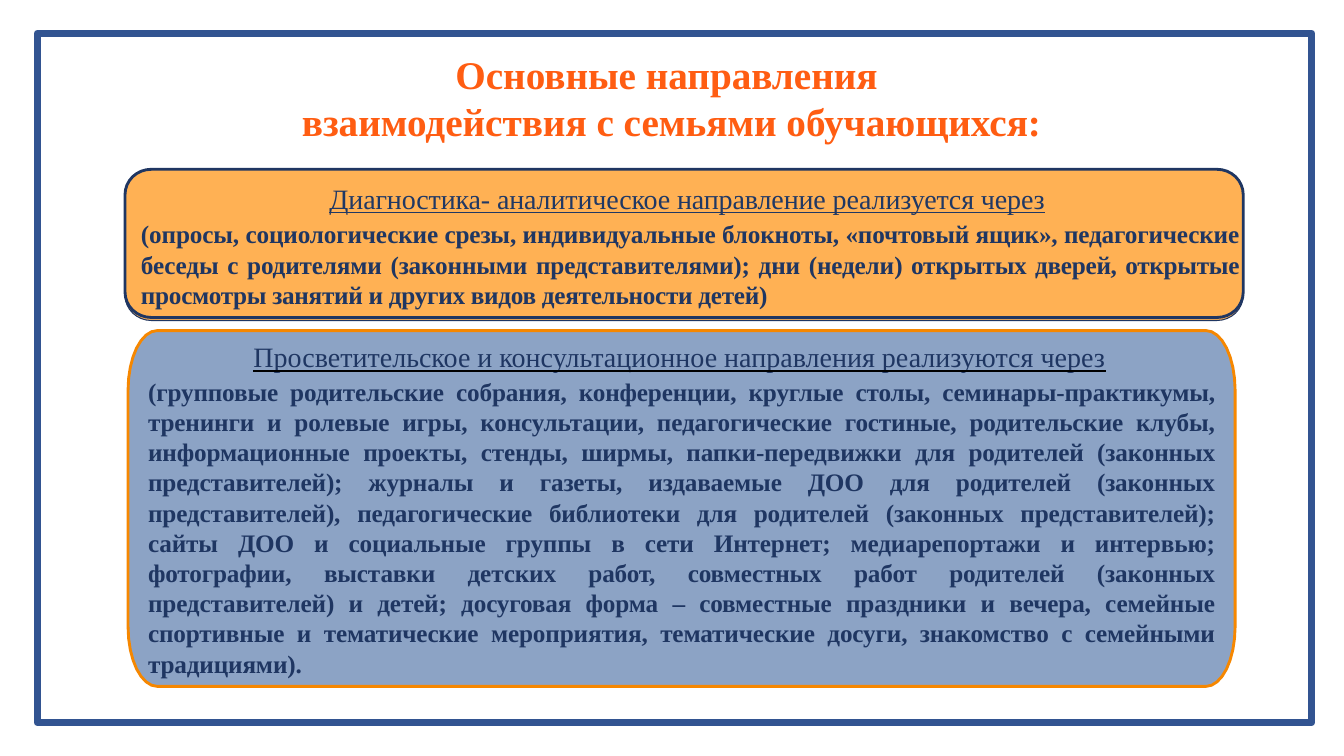
from math import cos, pi, sin

from lxml.etree import SubElement
from pptx import Presentation
from pptx.dml.color import RGBColor
from pptx.enum.shapes import MSO_SHAPE
from pptx.enum.text import MSO_ANCHOR, PP_ALIGN
from pptx.oxml.ns import qn
from pptx.util import Inches, Pt

COLORS = {
    "white": "FFFFFF", "frame": "325491", "title": "FF5D12", "navy": "1F3662",
    "heading": "203864", "amber": "FFB154", "blue": "8CA3C5", "orange": "F68700",
    "black": "000000",
}


def color(name):
    return RGBColor.from_string(COLORS[name])


def add_text(box, paragraphs, size, ink, align, bold=False, underline=None, inset=0.1):
    """Add a text box; each paragraph is a list of (text, letter spacing) runs."""
    frame = slide.shapes.add_textbox(*map(Inches, box)).text_frame
    frame.word_wrap = True
    frame.vertical_anchor = MSO_ANCHOR.TOP
    frame.margin_left = frame.margin_right = Inches(inset)
    frame.margin_top = frame.margin_bottom = Inches(inset / 2)
    for index, runs in enumerate(paragraphs):
        paragraph = frame.paragraphs[0] if index == 0 else frame.add_paragraph()
        paragraph.alignment = align
        for text, spacing in runs:
            run = paragraph.add_run()
            run.text = text
            run.font.name = "Times New Roman"
            run.font.size = Pt(size)
            run.font.bold = bold
            run.font.color.rgb = color(ink)
            properties = run.font._element
            properties.set("spc", str(round(spacing * 100)))
            if underline:
                run.font.underline = True
                stroke = SubElement(properties, qn("a:uFill"))
                fill = SubElement(stroke, qn("a:solidFill"))
                SubElement(fill, qn("a:srgbClr"), val=COLORS[underline])
                properties.find(qn("a:solidFill")).addnext(stroke)


presentation = Presentation()
presentation.slide_width = Inches(13.33)
presentation.slide_height = Inches(7.5)
slide = presentation.slides.add_slide(presentation.slide_layouts[6])

border = slide.shapes.add_shape(
    MSO_SHAPE.RECTANGLE, Inches(0.37), Inches(0.33), Inches(12.64), Inches(6.84))
border.shadow.inherit = False
border.fill.solid()
border.fill.fore_color.rgb = color("white")
border.line.color.rgb = color("frame")
border.line.width = Pt(5)

# left, top, width, height, corner radii, fill, line, line width
panels = [
    (1.24, 1.68, 11.09, 1.5, 0.26, 0.25, "amber", "navy", 0.75),
    (1.24, 1.68, 11.09, 1.47, 0.26, 0.25, "amber", "navy", 2.04),
    (1.27, 3.28, 10.98, 3.53, 0.29, 0.59, "blue", "orange", 2.04),
]
for left, top, width, height, radius_x, radius_y, fill, line, weight in panels:
    corners = [
        (left + width - radius_x, top + height - radius_y),
        (left + radius_x, top + height - radius_y),
        (left + radius_x, top + radius_y),
        (left + width - radius_x, top + radius_y),
    ]
    outline = []
    for quarter, (center_x, center_y) in enumerate(corners):
        for step in range(9):
            angle = (quarter + step / 8) * pi / 2
            outline.append((Inches(center_x + radius_x * cos(angle)),
                            Inches(center_y + radius_y * sin(angle))))
    builder = slide.shapes.build_freeform(*outline[0])
    builder.add_line_segments(outline[1:], close=True)
    panel = builder.convert_to_shape()
    panel.shadow.inherit = False
    panel.fill.solid()
    panel.fill.fore_color.rgb = color(fill)
    panel.line.color.rgb = color(line)
    panel.line.width = Pt(weight)

add_text((0.63, 0.45, 12.06, 1.04),
         [[("Основные направления ", 0)], [("взаимодействия с семьями обучающихся:", 0)]],
         28, "title", PP_ALIGN.CENTER, bold=True)

add_text((1.26, 1.8, 11.11, 0.35),
         [[("Диагностика- аналитическое направление реализуется через", -0.1)]],
         20, "heading", PP_ALIGN.CENTER, underline="heading", inset=0)

add_text((1.3, 2.12, 11.09, 1.01),
         [[("(опросы, социологические срезы, индивидуальные блокноты, «почтовый ящик», "
            "педагогические беседы с родителями (законными представителями); дни (недели", -0.1),
           (") открытых дверей, открытые просмотры занятий и других видов деятельности детей)",
            -0.2)]],
         18, "navy", PP_ALIGN.JUSTIFY, bold=True)

add_text((1.37, 3.68, 10.78, 3.43),
         [[("(групповые родительские собрания, конференции, круглые столы, семинары-практикумы, "
            "тренинги и ролевые игры, консультации, педагогические гостиные, родительские клубы, "
            "информационные проекты, стенды, ширмы, папки-передвижки для родителей (законных "
            "представителей); журналы и газеты, издаваемые ДОО для родителей (законных "
            "представителей), педагогические библиотеки для родителей (законных представителей); "
            "сайты ДОО и социальные группы в сети Интернет; медиарепортажи и интервью; "
            "фотографии, выставки детских работ, совместных работ родителей (законных "
            "представителей) и детей; досуговая форма – совместные праздники и вечера, семейные "
            "спортивные и тематические мероприятия, тематические досуги, знакомство с семейными "
            "традициями).", -0.1)]],
         18, "navy", PP_ALIGN.JUSTIFY, bold=True)

add_text((1.32, 3.37, 10.84, 0.35),
         [[("Просветительское и консультационное направления реализуются через", 0)]],
         20, "navy", PP_ALIGN.CENTER, underline="black", inset=0)

presentation.save("out.pptx")
